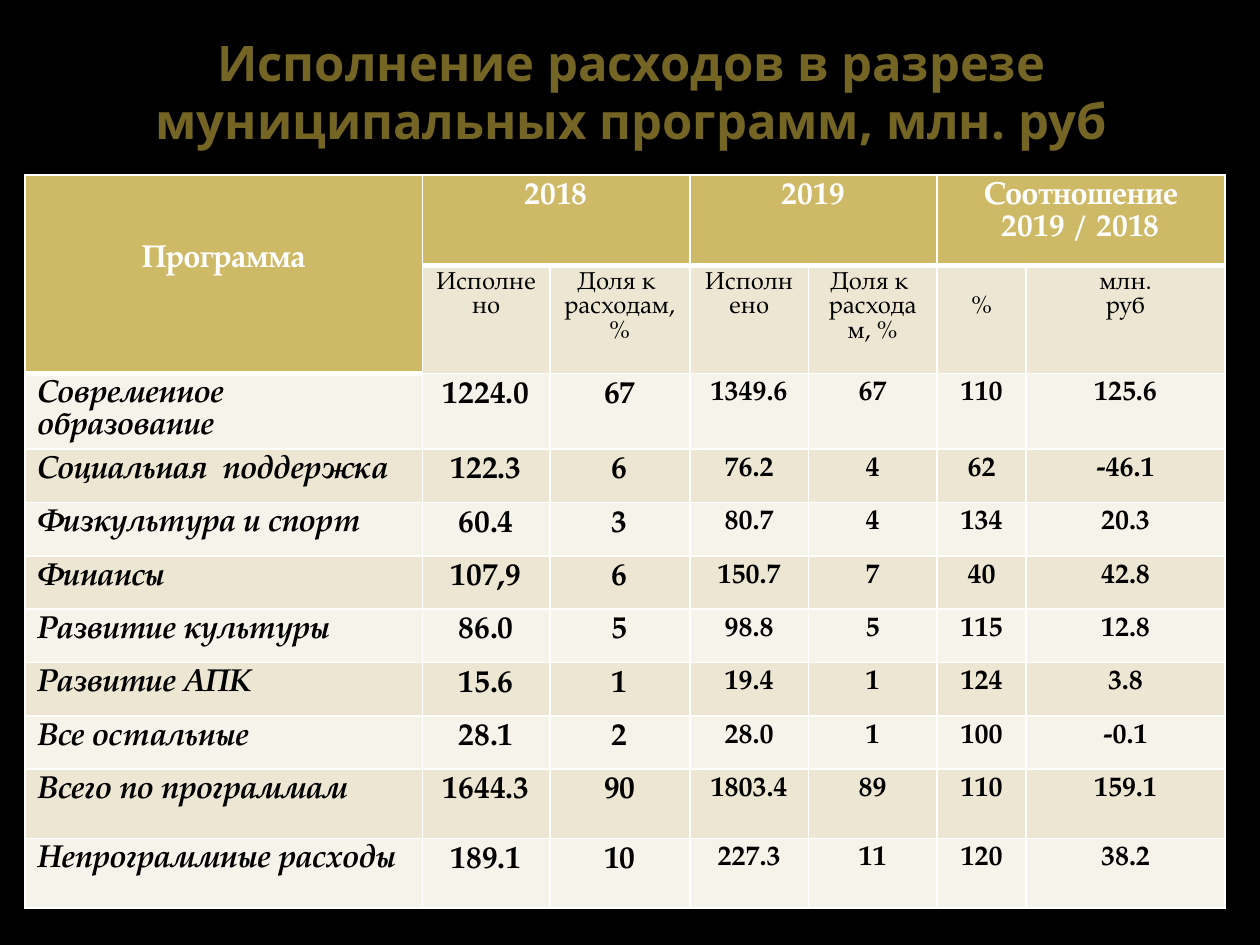
from dataclasses import dataclass

from lxml.etree import SubElement
from pptx import Presentation
from pptx.dml.color import RGBColor
from pptx.enum.text import MSO_ANCHOR, PP_ALIGN
from pptx.oxml.ns import qn
from pptx.util import Pt

COLORS = {
    "background": "000000",
    "title": "756525",
    "header": "CEB966",
    "band_dark": "EDE6D3",
    "band_light": "F6F3EA",
    "white": "FFFFFF",
    "black": "000000",
}
TITLE_FONT = "Open Sans"
TABLE_FONT = "TeX Gyre Pagella"
CELL_MARGIN = 3.6

COLUMN_WIDTHS = [227.3, 72.7, 80, 67.8, 73.5, 51, 113.5]
ROW_HEIGHTS = [51.6, 61.9, 43] + [30.5] * 6 + [39.6] * 2

YEARS = ["2018", "2019", "Соотношение\n2019 / 2018"]
SUBHEADINGS = ["Исполнено", "Доля к \nрасходам, %"] * 2 + ["%", "млн.\nруб"]
PROGRAMS = [
    ("Современное  образование", "1224.0", "67", "1349.6", "67", "110", "125.6"),
    ("Социальная  поддержка", "122.3", "6", "76.2", "4", "62", "-46.1"),
    ("Физкультура и спорт", "60.4", "3", "80.7", "4", "134", "20.3"),
    ("Финансы", "107,9", "6", "150.7", "7", "40", "42.8"),
    ("Развитие культуры", "86.0", "5", "98.8", "5", "115", "12.8"),
    ("Развитие АПК", "15.6", "1", "19.4", "1", "124", "3.8"),
    ("Все остальные", "28.1", "2", "28.0", "1", "100", "-0.1"),
    ("Всего по программам", "1644.3", "90", "1803.4", "89", "110", "159.1"),
    ("Непрограммные расходы", "189.1", "10", "227.3", "11", "120", "38.2"),
]


@dataclass(frozen=True)
class TextStyle:
    size: float
    color: str = "black"
    bold: bool = True
    italic: bool = False
    align: PP_ALIGN = PP_ALIGN.CENTER
    font: str = TABLE_FONT


TITLE = TextStyle(28, "title", font=TITLE_FONT)
HEADER = TextStyle(18, "white")
SUBHEADING = TextStyle(14, bold=False)
PROGRAM = TextStyle(18, italic=True, align=PP_ALIGN.LEFT)
VALUE_2018 = TextStyle(18)
VALUE = TextStyle(16)


def rgb(name: str) -> RGBColor:
    return RGBColor.from_string(COLORS[name])


def write_text(frame, text: str, style: TextStyle, line_height: float) -> None:
    frame.text = text
    for paragraph in frame.paragraphs:
        paragraph.alignment = style.align
        paragraph.line_spacing = Pt(line_height)
        font = paragraph.font
        font.name = style.font
        font.size = Pt(style.size)
        font.bold = style.bold
        font.italic = style.italic
        font.color.rgb = rgb(style.color)


def fill_cell(cell, text: str, style: TextStyle, fill: str, lines_above: int = 0) -> None:
    """Write the text, moved down by a number of its own lines."""
    write_text(cell.text_frame, text, style, style.size)
    cell.margin_top = Pt(CELL_MARGIN + lines_above * style.size)
    cell.fill.solid()
    cell.fill.fore_color.rgb = rgb(fill)


def set_borders(cell, top: float, bottom: float) -> None:
    """Draw white edges; the sides are always 1 pt wide."""
    properties = cell._tc.get_or_add_tcPr()
    edges = {"a:lnL": 1, "a:lnR": 1, "a:lnT": top, "a:lnB": bottom}
    for index, (tag, width) in enumerate(edges.items()):
        line = SubElement(properties, qn(tag), w=str(Pt(width)))
        solid = SubElement(line, qn("a:solidFill"))
        SubElement(solid, qn("a:srgbClr"), val=COLORS["white"])
        properties.insert(index, line)


def add_title(slide) -> None:
    box = slide.shapes.add_textbox(Pt(36.7), Pt(15.1), Pt(648), Pt(74.2))
    frame = box.text_frame
    frame.word_wrap = True
    frame.vertical_anchor = MSO_ANCHOR.MIDDLE
    write_text(frame, "Исполнение расходов в разрезе муниципальных программ, млн. руб",
               TITLE, 33)


def add_budget_table(slide) -> None:
    table = slide.shapes.add_table(
        len(ROW_HEIGHTS), len(COLUMN_WIDTHS), Pt(14.2), Pt(100),
        Pt(sum(COLUMN_WIDTHS)), Pt(sum(ROW_HEIGHTS))).table
    table.first_row = table.horz_banding = False
    for column, width in zip(table.columns, COLUMN_WIDTHS):
        column.width = Pt(width)
    for row, height in zip(table.rows, ROW_HEIGHTS):
        row.height = Pt(height)

    table.cell(0, 0).merge(table.cell(1, 0))
    fill_cell(table.cell(0, 0), "Программа", HEADER, "header", lines_above=2)
    for index, year in enumerate(YEARS):
        left = 1 + 2 * index
        table.cell(0, left).merge(table.cell(0, left + 1))
        fill_cell(table.cell(0, left), year, HEADER, "header")
    for column, text in enumerate(SUBHEADINGS, start=1):
        fill_cell(table.cell(1, column), text, SUBHEADING, "band_dark",
                  lines_above=1 if text == "%" else 0)

    styles = [PROGRAM] + [VALUE_2018] * 2 + [VALUE] * 4
    for row, program in enumerate(PROGRAMS, start=2):
        fill = "band_dark" if row % 2 else "band_light"
        for column, (text, style) in enumerate(zip(program, styles)):
            fill_cell(table.cell(row, column), text, style, fill)

    for row in range(len(ROW_HEIGHTS)):
        for column in range(len(COLUMN_WIDTHS)):
            header_end = 1 if column == 0 else 0
            set_borders(table.cell(row, column),
                        top=3 if row == header_end + 1 else 1,
                        bottom=3 if row in (0, header_end) else 1)


def main() -> None:
    presentation = Presentation()
    presentation.slide_width, presentation.slide_height = Pt(720), Pt(540)
    slide = presentation.slides.add_slide(presentation.slide_layouts[6])
    slide.background.fill.solid()
    slide.background.fill.fore_color.rgb = rgb("background")
    add_title(slide)
    add_budget_table(slide)
    presentation.save("out.pptx")


if __name__ == "__main__":
    main()
